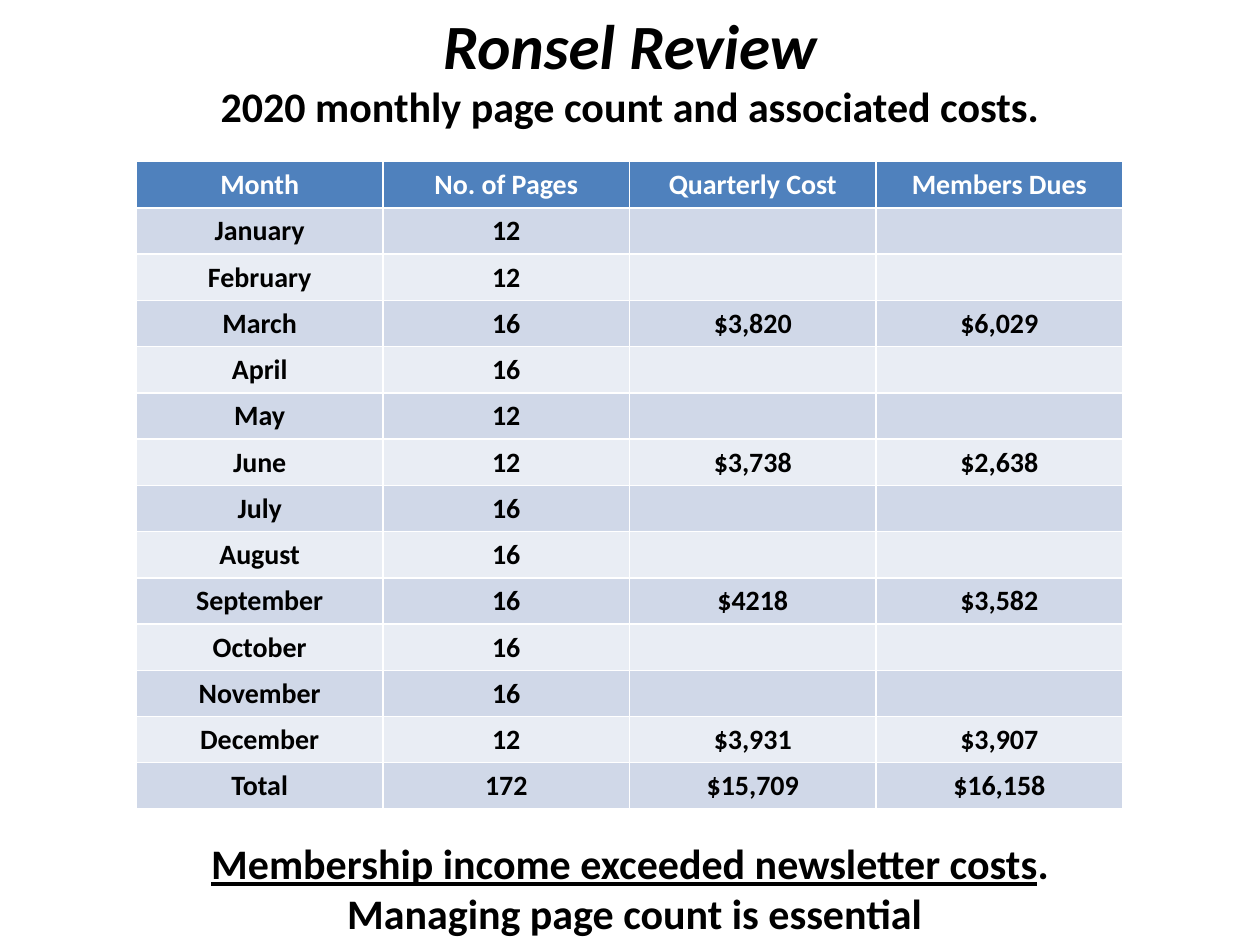
"""Build a slide with the 2020 newsletter page counts, costs and member dues."""
from dataclasses import dataclass

import lxml.etree
import pptx
import pptx.dml.color
import pptx.enum.text
import pptx.oxml.ns
import pptx.slide
import pptx.table
import pptx.text.text
import pptx.util

Cm = pptx.util.Cm
CENTER = pptx.enum.text.PP_ALIGN.CENTER


@dataclass(frozen=True)
class Theme:
    font: str = "Calibri"
    text: str = "000000"
    header_text: str = "FFFFFF"
    header_fill: str = "4F81BD"
    bands: tuple[str, str] = ("D0D8E8", "E9EDF4")
    title_size: int = 36
    body_size: int = 24
    table_size: int = 16


@dataclass(frozen=True)
class Piece:
    text: str
    italic: bool = False
    underline: bool = False


@dataclass(frozen=True)
class TextBlock:
    left: float
    top: float
    width: float
    height: float
    size: int
    lines: tuple[tuple[Piece, ...], ...]
    anchor: pptx.enum.text.MSO_ANCHOR = pptx.enum.text.MSO_ANCHOR.TOP


@dataclass(frozen=True)
class Record:
    period: str
    pages: str
    cost: str = ""
    dues: str = ""

    def values(self) -> tuple[str, ...]:
        return self.period, self.pages, self.cost, self.dues


THEME = Theme()
PAGE_WIDTH, PAGE_HEIGHT = 25.4, 19.05
TABLE_LEFT, TABLE_TOP = 2.75, 3.26
COLUMN_WIDTH, ROW_HEIGHT = 4.97, 0.93

BLOCKS = (
    TextBlock(1.27, -0.2, 22.86, 2.2, THEME.title_size,
              ((Piece("Ronsel Review", italic=True),),),
              pptx.enum.text.MSO_ANCHOR.MIDDLE),
    TextBlock(0, 1.5, PAGE_WIDTH, 1.28, THEME.body_size,
              ((Piece("2020 monthly page count and associated costs."),),)),
    TextBlock(0, 16.76, PAGE_WIDTH, 2.29, THEME.body_size,
              ((Piece("Membership income exceeded newsletter costs", underline=True),
                Piece(".")),
               (Piece(" Managing page count is essential"),))),
)

HEADER = Record("Month", "No. of Pages", "Quarterly Cost", "Members Dues")
RECORDS = (
    Record("January", "12"),
    Record("February", "12"),
    Record("March", "16", "$3,820", "$6,029"),
    Record("April", "16"),
    Record("May", "12"),
    Record("June", "12", "$3,738", "$2,638"),
    Record("July", "16"),
    Record("August", "16"),
    Record("September", "16", "$4218", "$3,582"),
    Record("October", "16"),
    Record("November", "16"),
    Record("December", "12", "$3,931", "$3,907"),
    Record("Total", "172", "$15,709", "$16,158"),
)


def color(value: str) -> pptx.dml.color.RGBColor:
    return pptx.dml.color.RGBColor.from_string(value)


def add_span(para: pptx.text.text._Paragraph, piece: Piece, size: int, ink: str) -> None:
    span = para.add_run()
    span.text = piece.text
    font = span.font
    font.name, font.size, font.bold = THEME.font, pptx.util.Pt(size), True
    font.italic, font.underline = piece.italic, piece.underline
    font.color.rgb = color(ink)


def add_text_block(page: pptx.slide.Slide, block: TextBlock) -> None:
    box = page.shapes.add_textbox(
        Cm(block.left), Cm(block.top), Cm(block.width), Cm(block.height))
    frame = box.text_frame
    frame.word_wrap = True
    frame.vertical_anchor = block.anchor
    for index, line in enumerate(block.lines):
        para = frame.add_paragraph() if index else frame.paragraphs[0]
        para.alignment = CENTER
        for piece in line:
            add_span(para, piece, block.size, THEME.text)


def fill_cell(cell: pptx.table._Cell, text: str, fill: str, ink: str) -> None:
    cell.fill.solid()
    cell.fill.fore_color.rgb = color(fill)
    para = cell.text_frame.paragraphs[0]
    para.alignment = CENTER
    if text:
        add_span(para, Piece(text), THEME.table_size, ink)
    else:
        lxml.etree.SubElement(para._p, pptx.oxml.ns.qn("a:endParaRPr"),
                              sz=str(THEME.table_size * 100))


def add_cost_table(page: pptx.slide.Slide) -> None:
    rows = (HEADER, *RECORDS)
    column_count = len(HEADER.values())
    table = page.shapes.add_table(
        len(rows), column_count, Cm(TABLE_LEFT), Cm(TABLE_TOP),
        Cm(COLUMN_WIDTH * column_count), Cm(ROW_HEIGHT * len(rows))).table
    for column in table.columns:
        column.width = Cm(COLUMN_WIDTH)
    for row_index, record in enumerate(rows):
        table.rows[row_index].height = Cm(ROW_HEIGHT)
        if row_index:
            fill, ink = THEME.bands[(row_index - 1) % 2], THEME.text
        else:
            fill, ink = THEME.header_fill, THEME.header_text
        for column_index, text in enumerate(record.values()):
            fill_cell(table.cell(row_index, column_index), text, fill, ink)


def main() -> None:
    deck = pptx.Presentation()
    deck.slide_width, deck.slide_height = Cm(PAGE_WIDTH), Cm(PAGE_HEIGHT)
    page = deck.slides.add_slide(deck.slide_layouts[6])
    for block in BLOCKS:
        add_text_block(page, block)
    add_cost_table(page)
    deck.save("out.pptx")


if __name__ == "__main__":
    main()
